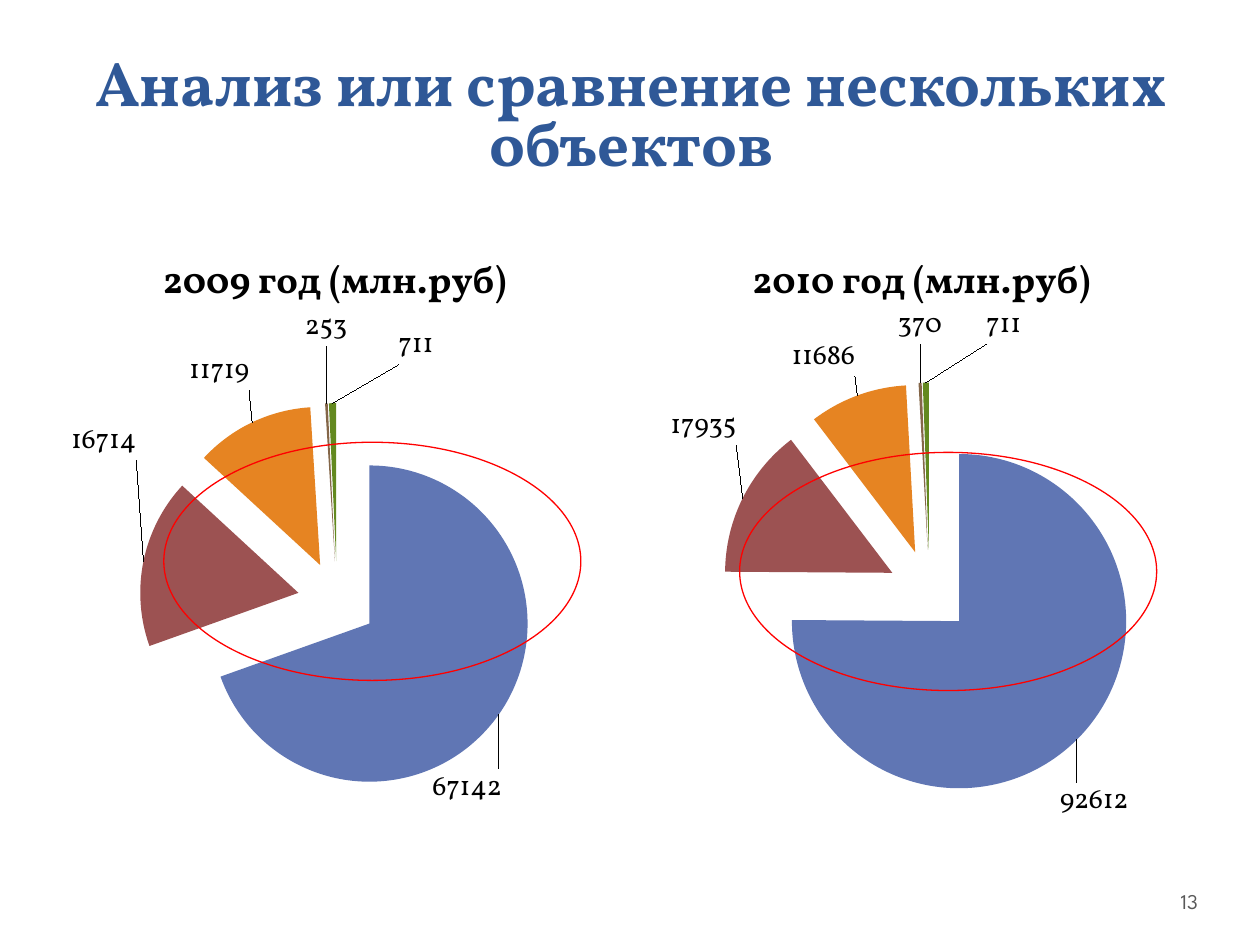
from lxml.etree import SubElement
from pptx import Presentation
from pptx.chart.data import CategoryChartData
from pptx.dml.color import RGBColor
from pptx.enum.chart import XL_CHART_TYPE, XL_LABEL_POSITION
from pptx.enum.shapes import MSO_SHAPE
from pptx.enum.text import MSO_ANCHOR, PP_ALIGN
from pptx.oxml import parse_xml
from pptx.oxml.ns import nsdecls, qn
from pptx.util import Pt

COLORS = {
    "title": "2F5897",
    "text": "000000",
    "page": "595959",
    "highlight": "FF0000",
}
SLICE_COLORS = ["6076B4", "9C5252", "E68422", "846648", "63891F"]
SERIF = "Vollkorn"
SANS = "League Spartan"
CHART_TOP, CHART_WIDTH, CHART_HEIGHT = 126, 318.24, 356.4

# Plot areas and label shifts are fractions of the chart's size.
YEARS = [
    {
        "title": "2010 год (млн.руб)",
        "left": 365.76,
        "values": [92612, 17935, 11686, 370, 711],
        "plot": (0.14, 0.26, 0.76, 0.67),
        "label_shifts": [(-0.04, 0.06), (0, -0.08), (0, -0.02), (0, -0.05), (0.14, -0.05)],
    },
    {
        "title": "2009 год (млн.руб)",
        "left": 28.8,
        "values": [67142, 16714, 11719, 253, 711],
        "plot": (0.16, 0.29, 0.71, 0.64),
        "label_shifts": [(-0.13, 0.08), (0, -0.16), (0, -0.04), (0, -0.08), (0.15, -0.05)],
    },
]
HIGHLIGHTS = [(93.6, 252.72), (422.64, 258.48)]


def rgb(name):
    return RGBColor.from_string(COLORS[name])


def set_font(font, size, color, name=SERIF, bold=False):
    font.size = Pt(size)
    font.name = name
    font.bold = bold
    font.color.rgb = rgb(color)


def add_text(slide, text, left, top, width, height, *, size, color, name=SERIF,
             bold=False, align=PP_ALIGN.LEFT, anchor=MSO_ANCHOR.MIDDLE,
             line_spacing=None, left_inset=7.2, right_inset=7.2):
    box = slide.shapes.add_textbox(Pt(left), Pt(top), Pt(width), Pt(height))
    frame = box.text_frame
    frame.word_wrap = True
    frame.vertical_anchor = anchor
    frame.margin_left, frame.margin_right = Pt(left_inset), Pt(right_inset)
    paragraph = frame.paragraphs[0]
    paragraph.alignment = align
    paragraph.line_spacing = line_spacing
    run = paragraph.add_run()
    run.text = text
    set_font(run.font, size, color, name, bold)


def place(element, index, x, y, size=None, edge=False):
    """Give a chart part a manual layout, inserted as its child at index."""
    for old in element.findall(qn("c:layout")):
        element.remove(old)
    layout = parse_xml(f"<c:layout {nsdecls('c')}><c:manualLayout/></c:layout>")
    settings = []
    if size:
        settings.append(("layoutTarget", "inner"))
    if edge:
        settings += [("xMode", "edge"), ("yMode", "edge")]
    settings += [("x", x), ("y", y)]
    if size:
        settings += zip("wh", size)
    for tag, value in settings:
        SubElement(layout[0], qn(f"c:{tag}")).set("val", str(value))
    element.insert(index, layout)


def style_title(chart, text):
    chart.has_title = True
    paragraph = chart.chart_title.text_frame.paragraphs[0]
    run = paragraph.add_run()
    run.text = text
    set_font(run.font, 21.6, "text", bold=True)
    place(chart.chart_title._element, 1, 0.19, 0.04, edge=True)


def style_slices(series, label_shifts):
    for index, (color, shift) in enumerate(zip(SLICE_COLORS, label_shifts)):
        point = series.points[index]
        point.format.fill.solid()
        point.format.fill.fore_color.rgb = RGBColor.from_string(color)
        point.format.line.fill.background()
        point.data_label.position = XL_LABEL_POSITION.OUTSIDE_END
        set_font(point.data_label.font, 16, "text")
    for label, shift in zip(series._element.iter(qn("c:dLbl")), label_shifts):
        place(label, 1, *shift)
    first_point = series._element.find(qn("c:dPt"))
    first_point.addprevious(parse_xml(f'<c:explosion {nsdecls("c")} val="25"/>'))


def add_pie(slide, year):
    data = CategoryChartData()
    data.categories = [str(n) for n in range(1, len(year["values"]) + 1)]
    data.add_series("Series 1", year["values"])
    chart = slide.shapes.add_chart(
        XL_CHART_TYPE.PIE, Pt(year["left"]), Pt(CHART_TOP),
        Pt(CHART_WIDTH), Pt(CHART_HEIGHT), data).chart
    chart.has_legend = False
    set_font(chart.font, 18, "text")
    style_title(chart, year["title"])

    series = chart.plots[0].series[0]
    labels = series.data_labels
    labels.show_value = True
    labels.position = XL_LABEL_POSITION.OUTSIDE_END
    set_font(labels.font, 16, "text")
    style_slices(series, year["label_shifts"])

    x, y, *size = year["plot"]
    plot_area = chart._chartSpace.find(f".//{qn('c:plotArea')}")
    place(plot_area, 0, x, y, size, edge=True)


def add_highlight(slide, left, top):
    ellipse = slide.shapes.add_shape(
        MSO_SHAPE.OVAL, Pt(left), Pt(top), Pt(238.32), Pt(136.08))
    ellipse.shadow.inherit = False
    ellipse.fill.background()
    ellipse.line.color.rgb = rgb("highlight")
    ellipse.line.width = Pt(0.75)


def main():
    presentation = Presentation()
    presentation.slide_width, presentation.slide_height = Pt(720), Pt(540)
    slide = presentation.slides.add_slide(presentation.slide_layouts[6])
    for year in YEARS:
        add_pie(slide, year)
    add_text(slide, "13", 672.48, 500.4, 43.92, 28.8, size=12, color="page",
             name=SANS, left_inset=2.2, right_inset=3.6)
    add_text(slide, "Анализ или сравнение нескольких объектов",
             36.72, -2.16, 648, 108, size=36, color="title", bold=True,
             align=PP_ALIGN.CENTER, anchor=MSO_ANCHOR.BOTTOM, line_spacing=0.8)
    for left, top in HIGHLIGHTS:
        add_highlight(slide, left, top)
    presentation.save("out.pptx")


if __name__ == "__main__":
    main()
